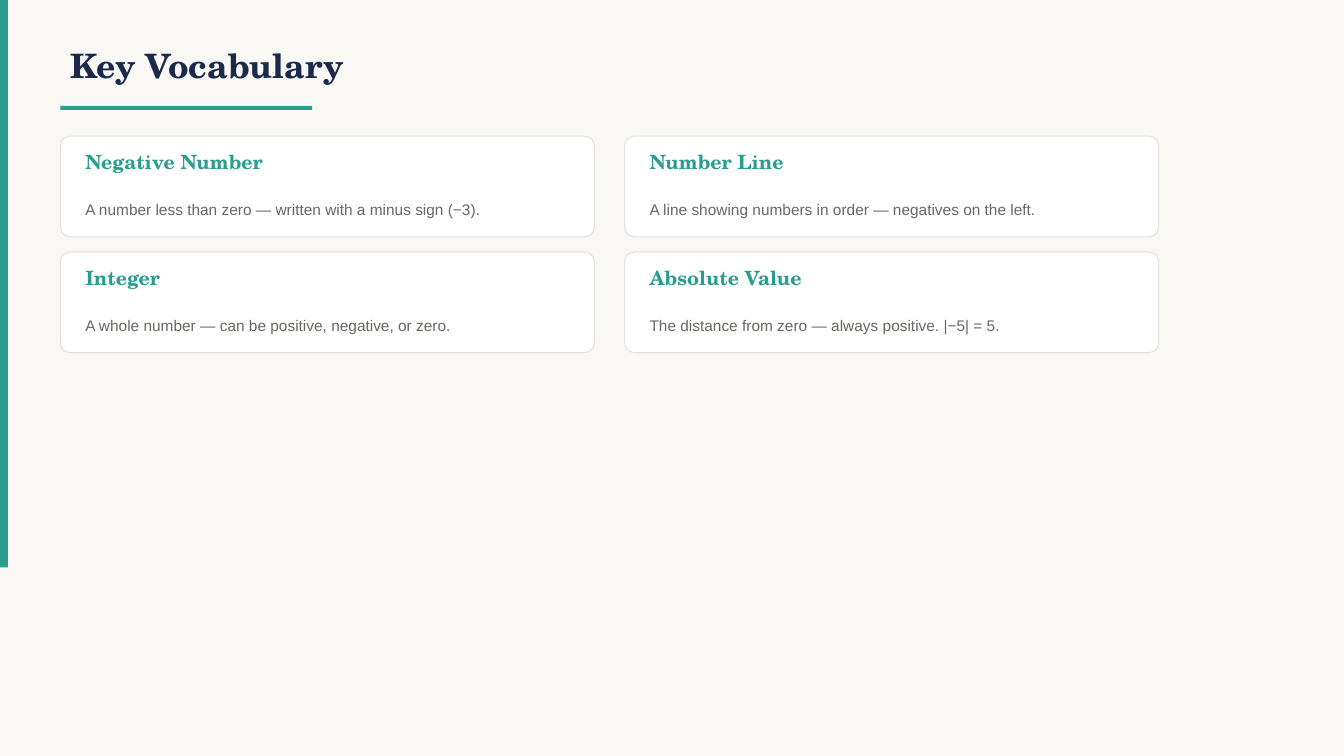
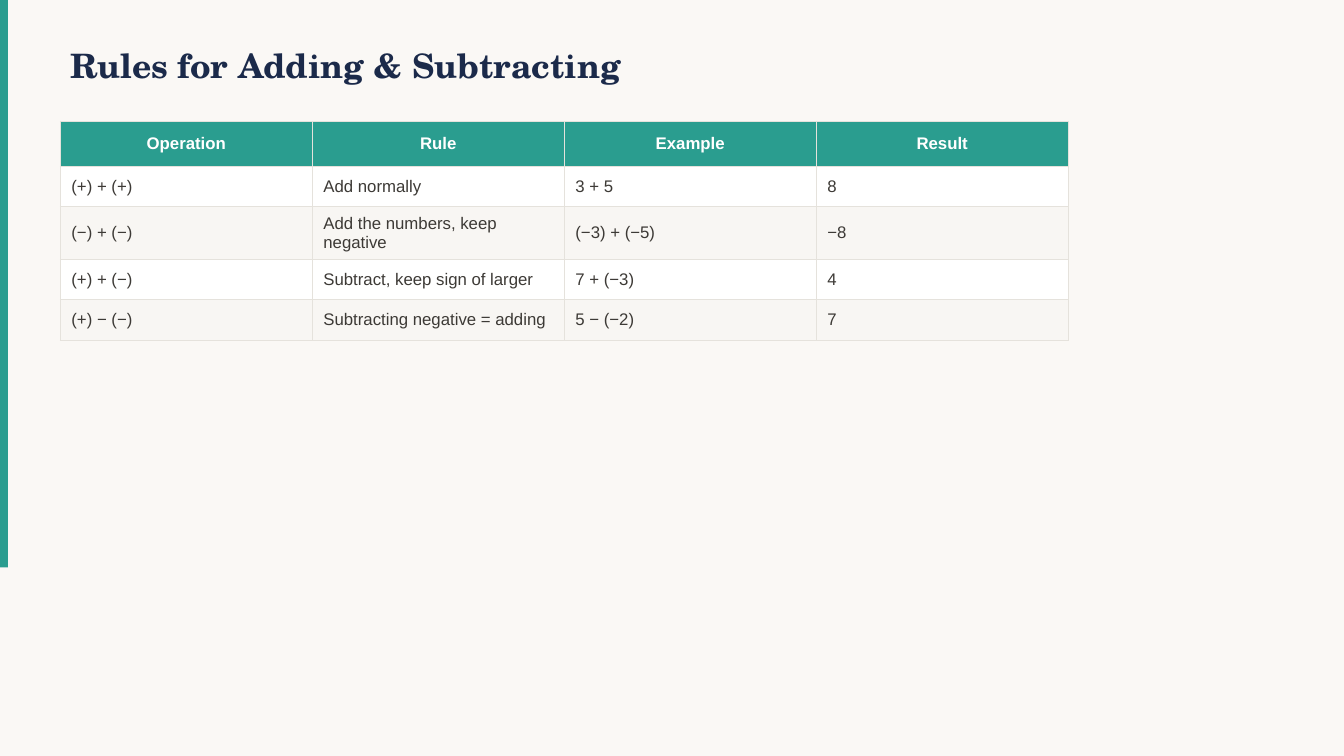
import dataclasses

import lxml.etree
import pptx
import pptx.dml.color
import pptx.enum.shapes
import pptx.enum.text
import pptx.oxml.ns
import pptx.util

Cm = pptx.util.Cm
Pt = pptx.util.Pt
Shape = pptx.enum.shapes.MSO_SHAPE
Align = pptx.enum.text.PP_ALIGN
Anchor = pptx.enum.text.MSO_ANCHOR


@dataclasses.dataclass(frozen=True)
class Theme:
    background: str = "FAF8F5"
    accent: str = "2A9D8F"
    title: str = "1B2A4A"
    body: str = "6B6660"
    cell: str = "3D3A36"
    white: str = "FFFFFF"
    stripe: str = "F8F6F3"
    border: str = "E5E2DC"
    serif: str = "TeX Gyre Schola"
    sans: str = "Arial"
    title_size: int = 24
    term_size: int = 14
    cell_size: int = 12
    body_size: int = 11
    card_line: float = 0.75
    table_line: float = 0.5


THEME = Theme()
MARGIN = Cm(1.52)
CONTENT_WIDTH = Cm(25.4)

VOCABULARY = [
    ("Negative Number", "A number less than zero — written with a minus sign (−3)."),
    ("Number Line", "A line showing numbers in order — negatives on the left."),
    ("Integer", "A whole number — can be positive, negative, or zero."),
    ("Absolute Value", "The distance from zero — always positive. |−5| = 5."),
]

RULES = [
    ("Operation", "Rule", "Example", "Result"),
    ("(+) + (+)", "Add normally", "3 + 5", "8"),
    ("(−) + (−)", "Add the numbers, keep negative", "(−3) + (−5)", "−8"),
    ("(+) + (−)", "Subtract, keep sign of larger", "7 + (−3)", "4"),
    ("(+) − (−)", "Subtracting negative = adding", "5 − (−2)", "7"),
]


def rgb(color):
    return pptx.dml.color.RGBColor.from_string(color)


def style_paragraph(paragraph, font_name, size, color, bold=False):
    font = paragraph.font
    font.name = font_name
    font.size = Pt(size)
    font.bold = bold
    font.color.rgb = rgb(color)


def add_box(slide, kind, left, top, width, height, fill, line=None):
    shape = slide.shapes.add_shape(kind, left, top, width, height)
    shape.shadow.inherit = False
    shape.fill.solid()
    shape.fill.fore_color.rgb = rgb(fill)
    if line:
        shape.line.color.rgb = rgb(line)
        shape.line.width = Pt(THEME.card_line)
    else:
        shape.line.fill.background()
    return shape


def add_text(slide, left, top, width, height, text, font_name, size, color, bold=False):
    frame = slide.shapes.add_textbox(left, top, width, height).text_frame
    frame.word_wrap = True
    frame.vertical_anchor = Anchor.MIDDLE
    paragraph = frame.paragraphs[0]
    paragraph.text = text
    style_paragraph(paragraph, font_name, size, color, bold)
    return paragraph


def add_titled_slide(presentation, title):
    slide = presentation.slides.add_slide(presentation.slide_layouts[6])
    slide.background.fill.solid()
    slide.background.fill.fore_color.rgb = rgb(THEME.background)
    add_box(slide, Shape.RECTANGLE, 0, 0, Cm(0.2), Cm(14.3), THEME.accent)
    add_text(slide, MARGIN, Cm(0.76), CONTENT_WIDTH, Cm(1.78), title,
             THEME.serif, THEME.title_size, THEME.title, True)
    return slide


def add_card(slide, left, top, width, height, term, definition):
    card = add_box(slide, Shape.ROUNDED_RECTANGLE, left, top, width, height,
                   THEME.white, THEME.border)
    card.adjustments[0] = 0.1
    text_left = left + Cm(0.38)
    text_width = width - 2 * Cm(0.38)
    add_text(slide, text_left, top + Cm(0.2), text_width, Cm(0.89), term,
             THEME.serif, THEME.term_size, THEME.accent, True)
    paragraph = add_text(slide, text_left, top + Cm(1.14), text_width, Cm(1.27),
                         definition, THEME.sans, THEME.body_size, THEME.body)
    paragraph.line_spacing = 1.3


def add_card_grid(slide, left, top, entries, columns=2):
    width, height = Cm(13.46), Cm(2.54)
    column_step = width + Cm(0.76)
    row_step = height + Cm(0.38)
    for index, (term, definition) in enumerate(entries):
        row, column = divmod(index, columns)
        add_card(slide, left + column * column_step, top + row * row_step,
                 width, height, term, definition)


def add_cell_borders(cell):
    properties = cell._tc.get_or_add_tcPr()
    qn = pptx.oxml.ns.qn
    for side in ("a:lnL", "a:lnR", "a:lnT", "a:lnB"):
        line = lxml.etree.SubElement(properties, qn(side), w=str(Pt(THEME.table_line)))
        fill = lxml.etree.SubElement(line, qn("a:solidFill"))
        lxml.etree.SubElement(fill, qn("a:srgbClr"), val=THEME.border)


def fill_cell(cell, text, row):
    header = row == 0
    cell.vertical_anchor = Anchor.MIDDLE
    cell.margin_left = cell.margin_right = Cm(0.28)
    cell.margin_top = cell.margin_bottom = Cm(0.15)
    add_cell_borders(cell)
    cell.fill.solid()
    stripe = THEME.white if row % 2 else THEME.stripe
    cell.fill.fore_color.rgb = rgb(THEME.accent if header else stripe)
    paragraph = cell.text_frame.paragraphs[0]
    paragraph.text = text
    paragraph.alignment = Align.CENTER if header else Align.LEFT
    style_paragraph(paragraph, THEME.sans, THEME.cell_size,
                    THEME.white if header else THEME.cell, header)


def add_rules_table(slide, left, top, width, rows):
    header_height, row_height = Cm(1.14), Cm(1.02)
    height = header_height + (len(rows) - 1) * row_height
    table = slide.shapes.add_table(len(rows), len(rows[0]), left, top, width, height).table
    table.horz_banding = False
    for row_index, texts in enumerate(rows):
        table.rows[row_index].height = row_height if row_index else header_height
        for column_index, text in enumerate(texts):
            fill_cell(table.cell(row_index, column_index), text, row_index)


def build_vocabulary_slide(presentation):
    slide = add_titled_slide(presentation, "Key Vocabulary")
    add_box(slide, Shape.RECTANGLE, MARGIN, Cm(2.67), Cm(6.35), Cm(0.1), THEME.accent)
    add_card_grid(slide, MARGIN, Cm(3.43), VOCABULARY)


def build_rules_slide(presentation):
    slide = add_titled_slide(presentation, "Rules for Adding & Subtracting")
    add_rules_table(slide, MARGIN, Cm(3.05), CONTENT_WIDTH, RULES)


def main():
    presentation = pptx.Presentation()
    presentation.slide_width = Cm(33.87)
    presentation.slide_height = Cm(19.05)
    build_vocabulary_slide(presentation)
    build_rules_slide(presentation)
    presentation.save("out.pptx")


if __name__ == "__main__":
    main()
